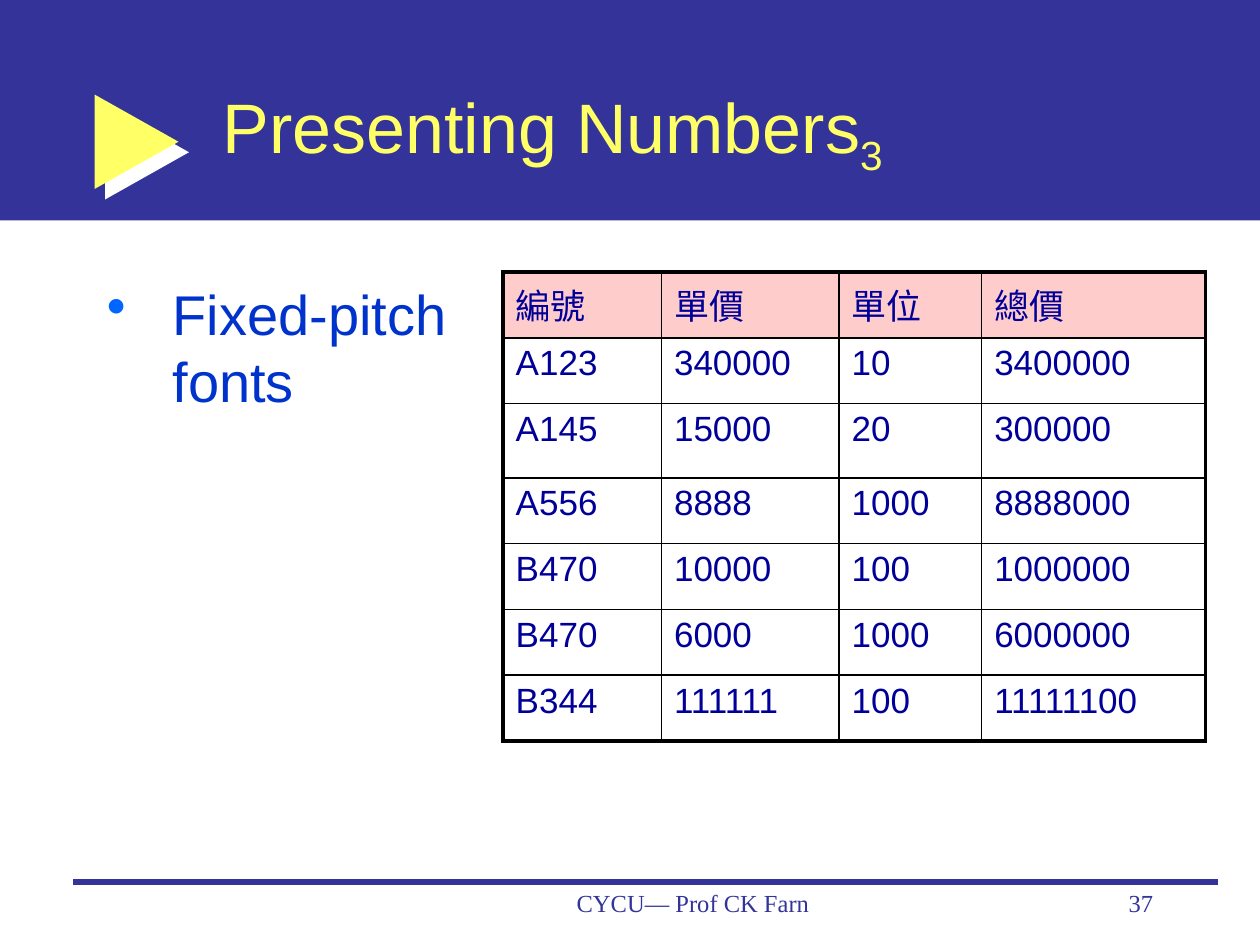
from lxml.etree import SubElement
from pptx import Presentation
from pptx.dml.color import RGBColor
from pptx.enum.shapes import MSO_CONNECTOR, MSO_SHAPE
from pptx.enum.text import MSO_ANCHOR, PP_ALIGN
from pptx.oxml import parse_xml
from pptx.oxml.ns import nsdecls, qn
from pptx.util import Pt

NAVY, YELLOW = "333399", "FFFF66"


def colour(value):
    return RGBColor.from_string(value)


def write(paragraph, text, size=20, font="Arial", ink="000099", align=PP_ALIGN.LEFT, baseline=0):
    paragraph.alignment = align
    run = paragraph.add_run()
    run.text = text
    run.font.size = Pt(size)
    run.font.name = font
    run.font.color.rgb = colour(ink)
    if baseline:
        run._r.get_or_add_rPr().set("baseline", str(baseline))


deck = Presentation()
deck.slide_width, deck.slide_height = Pt(720), Pt(540)
slide = deck.slides.add_slide(deck.slide_layouts[5])
shapes = slide.shapes

banner = shapes.add_shape(MSO_SHAPE.RECTANGLE, Pt(0), Pt(0), Pt(720), Pt(126))
marker = shapes.add_shape(MSO_SHAPE.RIGHT_ARROW, Pt(54), Pt(54), Pt(48), Pt(54))
marker.adjustments[0], marker.adjustments[1] = 0.384, 1
for part, fill in ((banner, NAVY), (marker, YELLOW)):
    part.shadow.inherit = False
    part.fill.solid()
    part.fill.fore_color.rgb = colour(fill)
    part.line.fill.background()
marker._element.spPr.find(qn("a:effectLst")).append(parse_xml(
    f'<a:outerShdw {nsdecls("a")} dist="{Pt(8.5)}" dir="2700000" algn="ctr" rotWithShape="0">'
    '<a:srgbClr val="FFFFFF"/></a:outerShdw>'))

footer_rule = shapes.add_connector(MSO_CONNECTOR.STRAIGHT, Pt(42), Pt(504), Pt(696), Pt(504))
footer_rule.line.color.rgb = colour(NAVY)
footer_rule.line.width = Pt(3)
SubElement(footer_rule._element.spPr, qn("a:effectLst"))

for text, left, width, align in (
    ("CYCU— Prof CK Farn", 282, 228, PP_ALIGN.CENTER),
    ("37", 516, 150, PP_ALIGN.RIGHT),
):
    footer = shapes.add_textbox(Pt(left), Pt(504), Pt(width), Pt(36)).text_frame
    footer.word_wrap = True
    write(footer.paragraphs[0], text, size=14, font="Times New Roman", ink=NAVY, align=align)

title = shapes.title
title.left, title.top, title.width, title.height = Pt(120), Pt(30), Pt(546), Pt(90)
title.text_frame.vertical_anchor = MSO_ANCHOR.MIDDLE
heading = title.text_frame.paragraphs[0]
write(heading, "Presenting Numbers", size=40, ink=YELLOW)
write(heading, "3", size=40, ink=YELLOW, baseline=-25000)
shapes._spTree.append(title._element)

prices = [
    ("編號", "單價", "單位", "總價"),
    ("A123", "340000", "10", "3400000"),
    ("A145", "15000", "20", "300000"),
    ("A556", "8888", "1000", "8888000"),
    ("B470", "10000", "100", "1000000"),
    ("B470", "6000", "1000", "6000000"),
    ("B344", "111111", "100", "11111100"),
]
widths = [90.5, 101.5, 81.5, 128]
heights = [37.6, 37.6, 42.4, 37.6, 37.6, 37.6, 37.6]
table = shapes.add_table(len(prices), len(widths), Pt(287.5), Pt(155.5),
                         Pt(sum(widths)), Pt(sum(heights))).table
table.first_row = table.horz_banding = False
for column, width in zip(table.columns, widths):
    column.width = Pt(width)
for row, height in zip(table.rows, heights):
    row.height = Pt(height)

last_row, last_column = len(prices) - 1, len(widths) - 1
for r, record in enumerate(prices):
    for c, value in enumerate(record):
        cell = table.cell(r, c)
        write(cell.text_frame.paragraphs[0], value, font="Arial" if r else "Times New Roman")
        outer_edges = {"L": c == 0, "R": c == last_column, "T": r == 0, "B": r == last_row}
        for side, outer in outer_edges.items():
            border = SubElement(cell._tc.get_or_add_tcPr(), qn(f"a:ln{side}"),
                                w=str(Pt(2.25 if outer else 1)))
            SubElement(SubElement(border, qn("a:solidFill")), qn("a:srgbClr"), val="000000")
        if r == 0:
            cell.fill.solid()
            cell.fill.fore_color.rgb = colour("FFCCCC")
        else:
            cell.fill.background()

advice = shapes.add_textbox(Pt(54), Pt(156), Pt(275), Pt(343)).text_frame
advice.word_wrap = True
bullet = advice.paragraphs[0]
bullet_format = bullet._p.get_or_add_pPr()
bullet_format.set("marL", str(Pt(37.5)))
bullet_format.set("indent", str(-Pt(37.5)))
SubElement(SubElement(bullet_format, qn("a:buClr")), qn("a:srgbClr"), val="0066FF")
SubElement(bullet_format, qn("a:buChar"), char="•")
write(bullet, "Fixed-pitch fonts", size=32, ink="0033CC")

deck.save("out.pptx")
